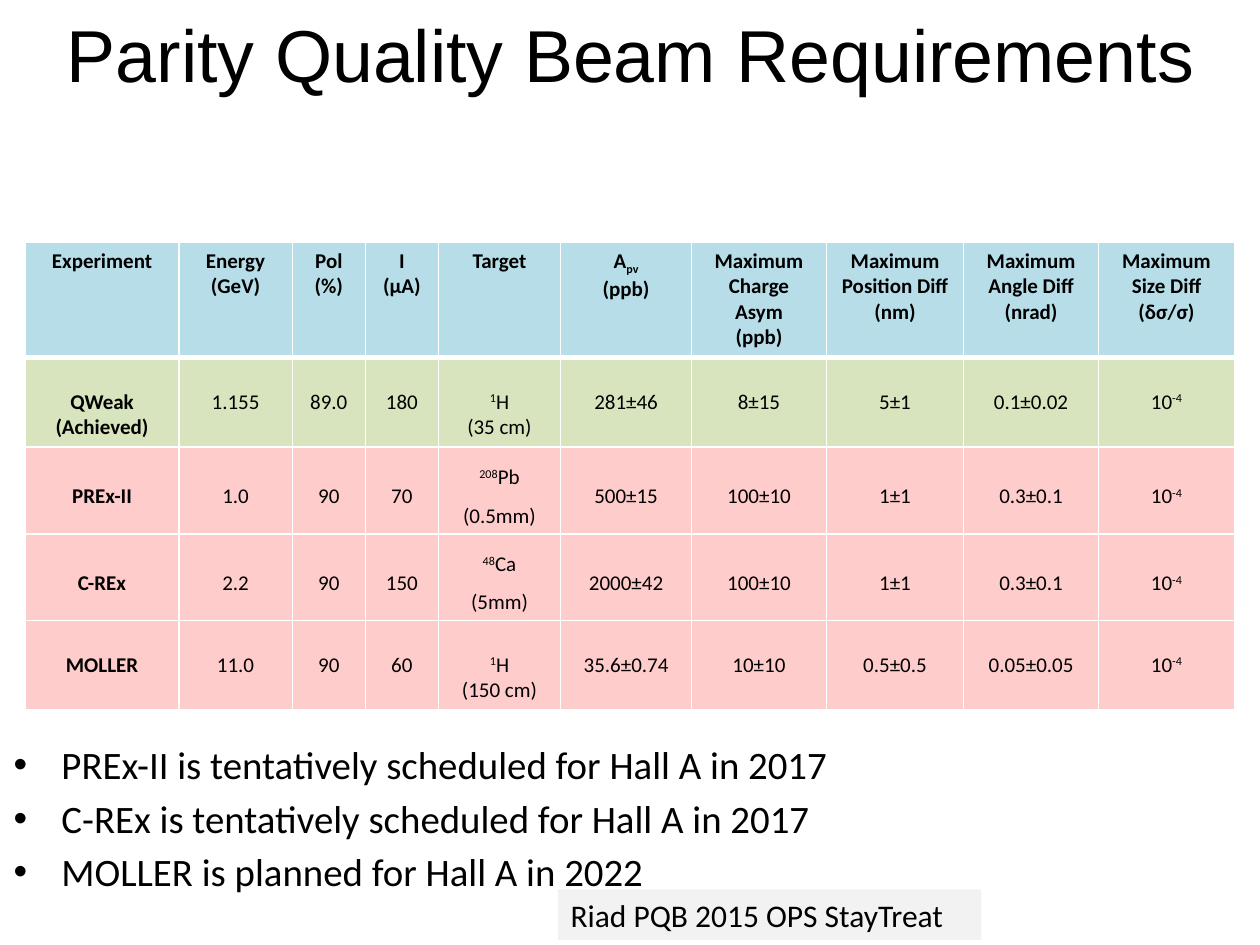
import pptx
import pptx.util
import pptx.dml.color
import pptx.enum.shapes
import pptx.enum.text
import pptx.oxml.ns
from lxml import etree

Inches, Pt = pptx.util.Inches, pptx.util.Pt
ALIGN = pptx.enum.text.PP_ALIGN
ANCHOR = pptx.enum.text.MSO_ANCHOR
qn = pptx.oxml.ns.qn

COLORS = {"text": "000000", "header": "B7DEE8", "achieved": "D7E4BD",
          "planned": "FFCCCC", "border": "FFFFFF", "credit": "F2F2F2"}
TITLE = "Parity Quality Beam Requirements"
CREDIT = "Riad PQB 2015 OPS StayTreat"
BULLETS = ["PREx-II is tentatively scheduled for Hall A in 2017",
           "C-REx is tentatively scheduled for Hall A in 2017",
           "MOLLER is planned for Hall A in 2022"]

# "|" separates runs, a leading "^" raises a run and "_" lowers it.
HEADER = ["Experiment", "Energy\n(GeV)", "Pol\n(%)", "I\n(µA)", "Target", "A|_pv\n(ppb)",
          "Maximum Charge Asym\n(ppb)", "Maximum\nPosition Diff\n(nm)",
          "Maximum\nAngle Diff\n(nrad)", "Maximum\nSize Diff\n(δσ/σ)"]
EXPERIMENTS = [
    ["QWeak\n(Achieved)", "1.155", "89.0", "180", "^1|H\n(35 cm)",
     "281±46", "8±15", "5±1", "0.1±0.02", "10|^-4"],
    ["PREx-II", "1.0", "90", "70", "^208|Pb (0.5mm)",
     "500±15", "100±10", "1±1", "0.3±0.1", "10|^-4"],
    ["C-REx", "2.2", "90", "150", "^48|Ca\n(5mm)",
     "2000±42", "100±10", "1±1", "0.3±0.1", "10|^-4"],
    ["MOLLER", "11.0", "90", "60", "^1|H\n(150 cm)",
     "35.6±0.74", "10±10", "0.5±0.5", "0.05±0.05", "10|^-4"],
]
COL_WIDTHS = [1.22, 0.9, 0.58, 0.58, 0.97, 1.04, 1.07, 1.09, 1.07, 1.08]
ROWS = [
    {"height": 0.92, "fill": "header", "layout": "top"},
    {"height": 0.7, "fill": "achieved", "layout": "lowered"},
    {"height": 0.69, "fill": "planned", "layout": "middle"},
    {"height": 0.69, "fill": "planned", "layout": "middle"},
    {"height": 0.69, "fill": "planned", "layout": "lowered"},
]
LAYOUTS = {
    "top": {"anchor": ANCHOR.TOP, "side": 0.1, "top": 0.05, "bottom": 0.05, "spacing": 1},
    "lowered": {"anchor": ANCHOR.TOP, "side": 0.1, "top": 0.25, "bottom": 0.05, "spacing": 1},
    "middle": {"anchor": ANCHOR.MIDDLE, "side": 0.08, "top": 0.04, "bottom": 0.04, "spacing": 1.5},
}
BASELINES = {"^": "30000", "_": "-25000"}


def rgb(name):
    return pptx.dml.color.RGBColor.from_string(COLORS[name])


def style(font, size, name="Calibri", bold=False):
    font.size, font.name, font.bold = Pt(size), name, bold
    font.color.rgb = rgb("text")


def add_text(slide, box, lines, size, name="Calibri"):
    sp = slide.shapes.add_textbox(*map(Inches, box))
    tf = sp.text_frame
    tf.word_wrap = True
    tf.text = "\n".join(lines)
    for p in tf.paragraphs:
        for r in p.runs:
            style(r.font, size, name)
    return tf


def add_bullets(tf):
    for i, p in enumerate(tf.paragraphs):
        pPr = p._p.get_or_add_pPr()
        pPr.set("marL", str(Inches(0.38)))
        pPr.set("indent", str(Inches(-0.38)))
        etree.SubElement(pPr, qn("a:buFont"), typeface="Arial")
        etree.SubElement(pPr, qn("a:buChar"), char="•")
        if i:
            p.space_before = Pt(4)


def set_borders(cell, row):
    tcPr = cell._tc.get_or_add_tcPr()
    widths = {"L": 1, "R": 1, "T": 3 if row == 1 else 1, "B": 3 if row == 0 else 1}
    for side, width in widths.items():
        ln = etree.SubElement(tcPr, qn("a:ln" + side), w=str(Pt(width)))
        fill = etree.SubElement(ln, qn("a:solidFill"))
        etree.SubElement(fill, qn("a:srgbClr"), val=COLORS["border"])


def fill_cell(cell, text, layout, bold):
    cell.vertical_anchor = layout["anchor"]
    cell.margin_left = cell.margin_right = Inches(layout["side"])
    cell.margin_top, cell.margin_bottom = Inches(layout["top"]), Inches(layout["bottom"])
    tf = cell.text_frame
    for i, line in enumerate(text.split("\n")):
        p = tf.add_paragraph() if i else tf.paragraphs[0]
        p.alignment = ALIGN.CENTER
        p.line_spacing = float(layout["spacing"])
        for part in line.split("|"):
            r = p.add_run()
            r.text = part.lstrip("^_")
            style(r.font, 12, bold=bold)
            if part[0] in BASELINES:
                r._r.get_or_add_rPr().set("baseline", BASELINES[part[0]])


def add_requirements(slide):
    heights = [row["height"] for row in ROWS]
    table = slide.shapes.add_table(
        len(ROWS), len(COL_WIDTHS), Inches(0.2), Inches(1.92),
        Inches(sum(COL_WIDTHS)), Inches(sum(heights))).table
    table.first_row = table.horz_banding = False
    for column, width in zip(table.columns, COL_WIDTHS):
        column.width = Inches(width)
    for i, (row, texts) in enumerate(zip(ROWS, [HEADER] + EXPERIMENTS)):
        table.rows[i].height = Inches(row["height"])
        for j, text in enumerate(texts):
            cell = table.cell(i, j)
            set_borders(cell, i)
            cell.fill.solid()
            cell.fill.fore_color.rgb = rgb(row["fill"])
            fill_cell(cell, text, LAYOUTS[row["layout"]], bold=i == 0 or j == 0)


def main():
    prs = pptx.Presentation()
    prs.slide_width, prs.slide_height = Inches(10), Inches(7.5)
    s = prs.slides.add_slide(prs.slide_layouts[6])
    add_requirements(s)
    add_bullets(add_text(s, (0.01, 5.83, 10, 1.22), BULLETS, 22.2))
    tf = add_text(s, (0.23, 0.11, 9.55, 0.62), [TITLE], 42, "Arial")
    tf.vertical_anchor = ANCHOR.MIDDLE
    tf.paragraphs[0].alignment = ALIGN.CENTER

    sp = s.shapes.add_shape(pptx.enum.shapes.MSO_SHAPE.RECTANGLE,
                            *map(Inches, (4.43, 7.06, 3.36, 0.4)))
    sp.shadow.inherit = False
    sp.fill.solid()
    sp.fill.fore_color.rgb = rgb("credit")
    sp.line.fill.background()
    tf = sp.text_frame
    tf.word_wrap = True
    tf.vertical_anchor = ANCHOR.TOP
    tf.text = CREDIT
    p = tf.paragraphs[0]
    p.alignment = ALIGN.LEFT
    style(p.runs[0].font, 18)
    prs.save("out.pptx")


if __name__ == "__main__":
    main()
